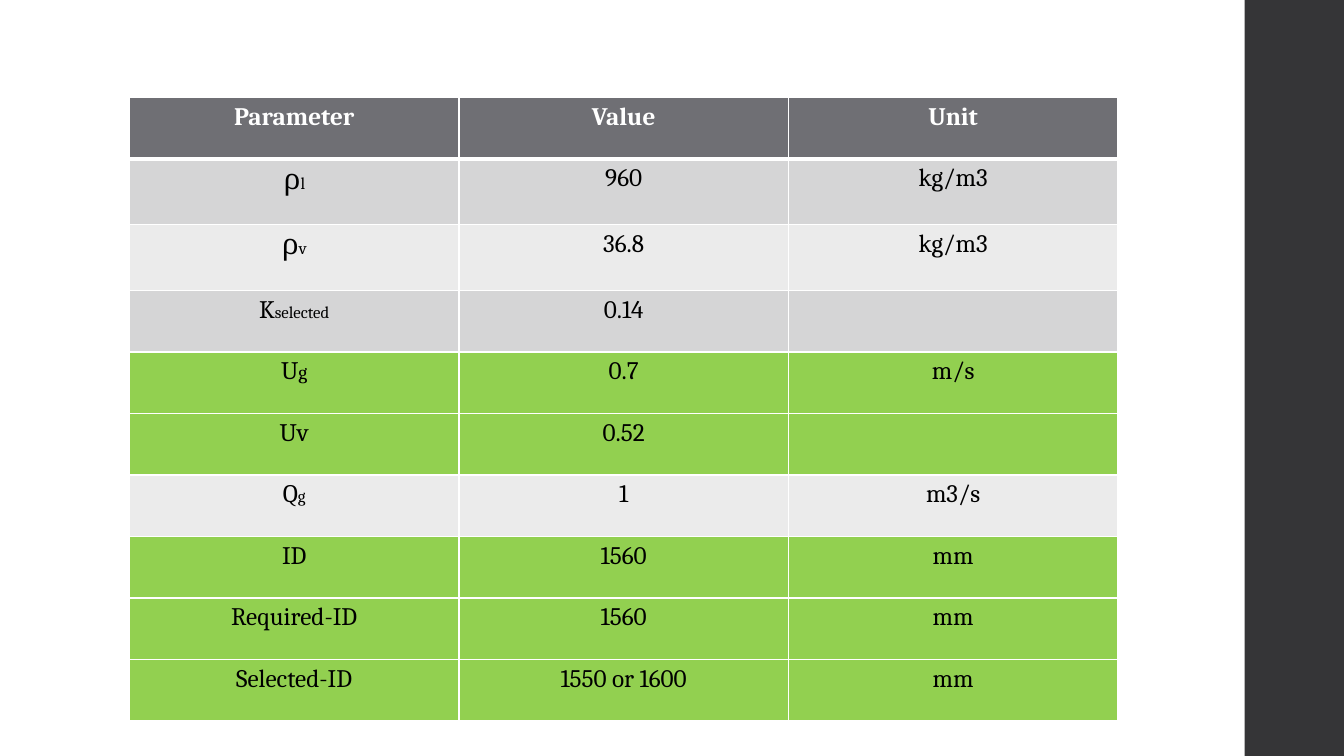
from lxml.etree import SubElement
from pptx import Presentation
from pptx.dml.color import RGBColor
from pptx.enum.shapes import MSO_SHAPE as Shape
from pptx.enum.text import PP_ALIGN as Align
from pptx.oxml.ns import qn
from pptx.util import Pt

SLIDE_W, SLIDE_H = 960, 540
WHITE, BLACK = "FFFFFF", "000000"
HEADER_GREY, DARK_BAND, LIGHT_BAND = "6F6F74", "D5D5D6", "EBEBEB"
RESULT_GREEN, SIDEBAR = "92D050", "353537"
HEADER_RULE = 3

HEADINGS = ("Parameter", "Value", "Unit")
# Symbol as (text, size) runs, value, unit, row fill
PARAMETERS = [
    ([("ρ", 20), ("l", 12)], "960", "kg/m3", DARK_BAND),
    ([("ρ", 20), ("v", 12)], "36.8", "kg/m3", LIGHT_BAND),
    ([("K", 18), ("selected", 12)], "0.14", "", DARK_BAND),
    ([("U", 18), ("g", 14)], "0.7", "m/s", RESULT_GREEN),
    ([("Uv", 18)], "0.52", "", RESULT_GREEN),
    ([("Q", 18), ("g", 12)], "1", "m3/s", LIGHT_BAND),
    ([("ID", 18)], "1560", "mm", RESULT_GREEN),
    ([("Required-ID", 18)], "1560", "mm", RESULT_GREEN),
    ([("Selected-ID", 18)], "1550 or 1600", "mm", RESULT_GREEN),
]


def color(hex_code):
    return RGBColor.from_string(hex_code)


def add_text(paragraph, text, size=18, bold=False, ink=BLACK):
    run = paragraph.add_run()
    run.text = text
    run.font.name = "Cambria"
    run.font.size = Pt(size)
    run.font.bold = bold
    run.font.color.rgb = color(ink)


def set_borders(cell, top=1, bottom=1):
    """Draw white cell borders; must run before the cell gets its fill."""
    properties = cell._tc.get_or_add_tcPr()
    for side, width in (("L", 1), ("R", 1), ("T", top), ("B", bottom)):
        line = SubElement(properties, qn(f"a:ln{side}"), w=str(Pt(width)))
        solid = SubElement(line, qn("a:solidFill"))
        SubElement(solid, qn("a:srgbClr"), val=WHITE)


def fill_cell(cell, runs, fill, top=1, bottom=1, **text_format):
    set_borders(cell, top, bottom)
    cell.fill.solid()
    cell.fill.fore_color.rgb = color(fill)
    paragraph = cell.text_frame.paragraphs[0]
    paragraph.alignment = Align.CENTER
    for text, size in runs:
        if text:
            add_text(paragraph, text, size, **text_format)


def add_sidebar(slide, left, top, width, height):
    sidebar = slide.shapes.add_shape(
        Shape.RECTANGLE, Pt(left), Pt(top), Pt(width), Pt(height))
    sidebar.shadow.inherit = False
    sidebar.fill.solid()
    sidebar.fill.fore_color.rgb = color(SIDEBAR)
    sidebar.line.fill.background()


def add_parameter_table(slide, left, top, width, height):
    row_count, column_count = len(PARAMETERS) + 1, len(HEADINGS)
    table = slide.shapes.add_table(
        row_count, column_count, Pt(left), Pt(top), Pt(width), Pt(height)).table
    density_rows, density_height = (1, 2), 47
    plain_height = ((height - density_height * len(density_rows))
                    / (row_count - len(density_rows)))
    for index, row in enumerate(table.rows):
        row.height = Pt(density_height if index in density_rows else plain_height)
    for column in table.columns:
        column.width = Pt(width / column_count)

    for column, heading in enumerate(HEADINGS):
        fill_cell(table.cell(0, column), [(heading, 18)], HEADER_GREY,
                  bottom=HEADER_RULE, bold=True, ink=WHITE)
    for row, (symbol, value, unit, fill) in enumerate(PARAMETERS, start=1):
        for column, runs in enumerate((symbol, [(value, 18)], [(unit, 18)])):
            fill_cell(table.cell(row, column), runs, fill,
                      top=HEADER_RULE if row == 1 else 1)


def main():
    deck = Presentation()
    deck.slide_width, deck.slide_height = Pt(SLIDE_W), Pt(SLIDE_H)
    slide = deck.slides.add_slide(deck.slide_layouts[6])
    slide.background.fill.solid()
    slide.background.fill.fore_color.rgb = color(WHITE)
    add_sidebar(slide, 889, 0, SLIDE_W - 889, SLIDE_H)
    add_parameter_table(slide, 92.5, 69.5, 706, 445.5)
    deck.save("out.pptx")


if __name__ == "__main__":
    main()
